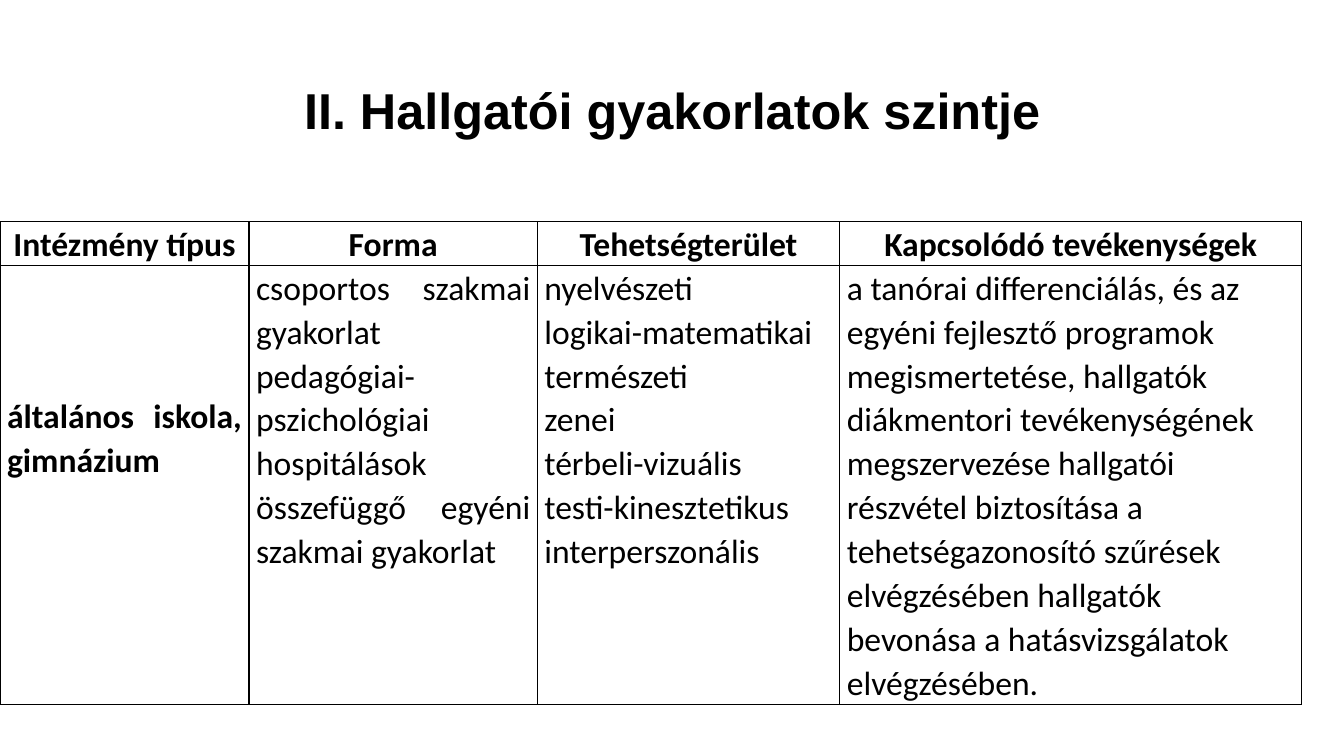
from dataclasses import dataclass

from lxml.etree import SubElement
from pptx import Presentation
from pptx.dml.color import RGBColor
from pptx.enum.text import MSO_ANCHOR, PP_ALIGN
from pptx.oxml.ns import qn
from pptx.util import Inches, Pt


@dataclass(frozen=True)
class Theme:
    ink: str = "000000"
    paper: str = "FFFFFF"
    title_font: str = "Arial"
    body_font: str = "Calibri"
    title_size: int = 36
    body_size: int = 24
    border_width: int = 1


def write_text(frame, paragraphs, *, font, size, color, bold=False,
               align=PP_ALIGN.LEFT, line_spacing=1.0):
    for index, text in enumerate(paragraphs):
        paragraph = frame.paragraphs[0] if index == 0 else frame.add_paragraph()
        paragraph.alignment = align
        paragraph.line_spacing = line_spacing
        paragraph.space_before = paragraph.space_after = Pt(0)
        run = paragraph.add_run()
        run.text = text
        run.font.name = font
        run.font.size = Pt(size)
        run.font.bold = bold
        run.font.color.rgb = RGBColor.from_string(color)


class SlideBuilder:
    def __init__(self, presentation, theme):
        self.theme = theme
        self.slide = presentation.slides.add_slide(presentation.slide_layouts[5])
        background = self.slide.background.fill
        background.solid()
        background.fore_color.rgb = RGBColor.from_string(theme.paper)

    def title(self, text, left, top, width, height):
        shape = self.slide.shapes.title
        shape.left, shape.top = Inches(left), Inches(top)
        shape.width, shape.height = Inches(width), Inches(height)
        shape.text_frame.vertical_anchor = MSO_ANCHOR.MIDDLE
        write_text(shape.text_frame, [text], font=self.theme.title_font,
                   size=self.theme.title_size, color=self.theme.ink, bold=True,
                   align=PP_ALIGN.CENTER, line_spacing=0.9)

    def table(self, rows, left, top, column_widths, row_heights):
        table = self.slide.shapes.add_table(
            len(rows), len(column_widths), Inches(left), Inches(top),
            Inches(sum(column_widths)), Inches(sum(row_heights))).table
        table.first_row = table.horz_banding = False
        for column, width in zip(table.columns, column_widths):
            column.width = Inches(width)
        for row, height in zip(table.rows, row_heights):
            row.height = Inches(height)
        for row_index, row in enumerate(rows):
            for column_index, content in enumerate(row):
                self.cell(table.cell(row_index, column_index), **content)

    def cell(self, cell, paragraphs, align, bold=False, margin_top=0):
        cell.margin_left = cell.margin_right = Inches(0.07)
        cell.margin_top, cell.margin_bottom = Inches(margin_top), Inches(0)
        cell.vertical_anchor = MSO_ANCHOR.TOP
        self.borders(cell)
        cell.fill.background()
        write_text(cell.text_frame, paragraphs, font=self.theme.body_font,
                   size=self.theme.body_size, color=self.theme.ink, bold=bold,
                   align=align, line_spacing=1.07)

    def borders(self, cell):
        properties = cell._tc.get_or_add_tcPr()
        for side in ("lnL", "lnR", "lnT", "lnB"):
            line = SubElement(properties, qn(f"a:{side}"),
                              w=str(Pt(self.theme.border_width)))
            fill = SubElement(line, qn("a:solidFill"))
            SubElement(fill, qn("a:srgbClr"), val=self.theme.ink)


def main():
    presentation = Presentation()
    presentation.slide_width = Inches(13.33)
    presentation.slide_height = Inches(7.5)
    builder = SlideBuilder(presentation, Theme())
    builder.title("II. Hallgatói gyakorlatok szintje", 0.92, 0.4, 11.5, 1.45)

    headings = ["Intézmény típus", "Forma", "Tehetségterület",
                "Kapcsolódó tevékenységek"]
    header = [dict(paragraphs=[heading], align=PP_ALIGN.CENTER, bold=True)
              for heading in headings]
    institution = ["általános iskola, gimnázium"]
    forms = ["csoportos szakmai gyakorlat",
             "pedagógiai-pszichológiai hospitálások",
             "összefüggő egyéni szakmai gyakorlat"]
    talents = ["nyelvészeti", "logikai-matematikai", "természeti", "zenei",
               "térbeli-vizuális", "testi-kinesztetikus", "interperszonális"]
    activities = ["a tanórai differenciálás, és az egyéni fejlesztő programok "
                  "megismertetése, hallgatók diákmentori tevékenységének "
                  "megszervezése hallgatói részvétel biztosítása a "
                  "tehetségazonosító szűrések elvégzésében hallgatók bevonása "
                  "a hatásvizsgálatok elvégzésében."]
    body = [
        dict(paragraphs=institution, align=PP_ALIGN.JUSTIFY, bold=True,
             margin_top=1.27),
        dict(paragraphs=forms, align=PP_ALIGN.JUSTIFY),
        dict(paragraphs=talents, align=PP_ALIGN.JUSTIFY),
        dict(paragraphs=activities, align=PP_ALIGN.LEFT),
    ]
    builder.table([header, body], 0, 2.2, [2.47, 2.86, 3, 4.58], [0.43, 4.35])
    presentation.save("out.pptx")


if __name__ == "__main__":
    main()
